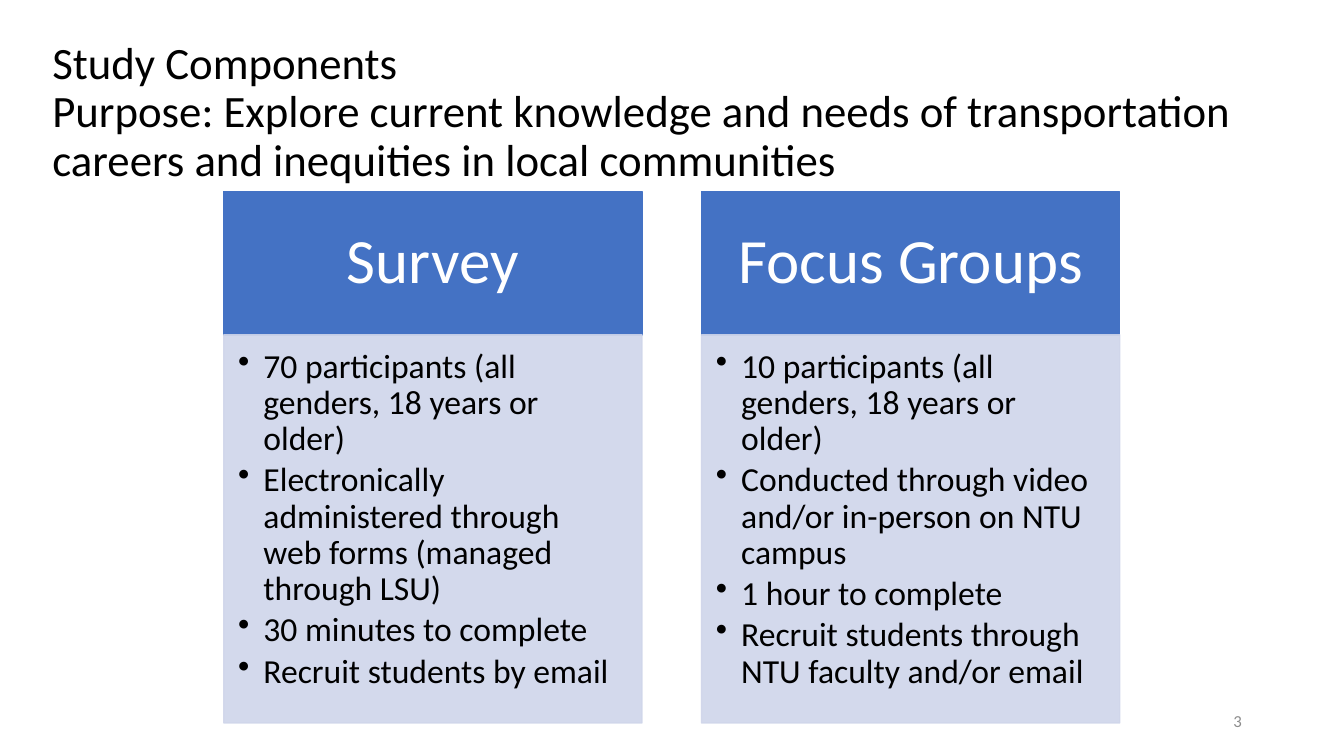
from pptx import Presentation
from pptx.dml.color import RGBColor
from pptx.enum.shapes import MSO_SHAPE
from pptx.enum.text import MSO_ANCHOR, PP_ALIGN
from pptx.oxml.ns import qn
from pptx.util import Cm, Pt
from lxml import etree

RECTANGLE = MSO_SHAPE.RECTANGLE
TOP, MIDDLE = MSO_ANCHOR.TOP, MSO_ANCHOR.MIDDLE
LEFT, CENTER, RIGHT = PP_ALIGN.LEFT, PP_ALIGN.CENTER, PP_ALIGN.RIGHT

TITLE = [
    "Study Components",
    "Purpose: Explore current knowledge and needs of transportation careers and inequities in local communities",
]
COMPONENTS = [
    ("Survey", [
        "70 participants (all genders, 18 years or older)",
        "Electronically administered through web forms (managed through LSU)",
        "30 minutes to complete",
        "Recruit students by email",
    ]),
    ("Focus Groups", [
        "10 participants (all genders, 18 years or older)",
        "Conducted through video and/or in-person on NTU campus",
        "1 hour to complete",
        "Recruit students through NTU faculty and/or email",
    ]),
]
PAGE_NUMBER = "3"

FONT = "Calibri"
BLACK, WHITE, GRAY = "000000", "FFFFFF", "8C8C8C"
BLUE, PALE_BLUE = "4472C4", "CFD5EA"
TEXT_INSETS = (0.25, 0.13, 0.25, 0.13)
HEADER_INSETS = (0.89, 0.51, 0.89, 0.51)
BODY_INSETS = (0.36, 0.36, 0.48, 0.53)
COLUMN_LEFT, COLUMN_TOP, COLUMN_WIDTH, COLUMN_GAP = 5.64, 4.83, 10.54, 1.5
HEADER_HEIGHT, BODY_HEIGHT = 3.61, 9.78
BULLET_INDENT = 0.64


def color(value):
    return RGBColor.from_string(value)


def write(shape, lines, size, text_color, insets=TEXT_INSETS, anchor=MIDDLE,
          align=LEFT, line_spacing=0.9, space_after=0):
    frame = shape.text_frame
    frame.text = "\n".join(lines)
    frame.word_wrap = True
    frame.vertical_anchor = anchor
    (frame.margin_left, frame.margin_top,
     frame.margin_right, frame.margin_bottom) = map(Cm, insets)
    for paragraph in frame.paragraphs:
        paragraph.alignment = align
        paragraph.line_spacing = line_spacing
        paragraph.space_after = Pt(space_after)
        for run in paragraph.runs:
            run.font.name = FONT
            run.font.size = Pt(size)
            run.font.color.rgb = color(text_color)


def add_text(slide, box, lines, size, text_color, **options):
    shape = slide.shapes.add_textbox(*map(Cm, box))
    write(shape, lines, size, text_color, **options)


def add_panel(slide, box, fill):
    shape = slide.shapes.add_shape(RECTANGLE, *map(Cm, box))
    shape.shadow.inherit = False
    shape.fill.solid()
    shape.fill.fore_color.rgb = color(fill)
    shape.line.color.rgb = color(fill)
    shape.line.width = Pt(1)
    return shape


def set_opacity(shape, percent):
    for element in shape.element.spPr.iter(qn("a:srgbClr")):
        etree.SubElement(element, qn("a:alpha"), val=str(percent * 1000))


def add_bullets(shape):
    for paragraph in shape.text_frame.paragraphs:
        properties = paragraph._p.get_or_add_pPr()
        properties.set("marL", str(Cm(BULLET_INDENT)))
        properties.set("indent", str(-Cm(BULLET_INDENT)))
        etree.SubElement(properties, qn("a:buChar"), char="•")


def add_component(slide, left, heading, points):
    header = add_panel(slide, (left, COLUMN_TOP, COLUMN_WIDTH, HEADER_HEIGHT), BLUE)
    write(header, [heading], 45, WHITE, insets=HEADER_INSETS, align=CENTER)
    body_top = COLUMN_TOP + HEADER_HEIGHT
    body = add_panel(slide, (left, body_top, COLUMN_WIDTH, BODY_HEIGHT), PALE_BLUE)
    set_opacity(body, 90)
    write(body, points, 24, BLACK, insets=BODY_INSETS, anchor=TOP, space_after=3.5)
    add_bullets(body)


def main():
    presentation = Presentation()
    presentation.slide_width, presentation.slide_height = Cm(33.87), Cm(19.05)
    slide = presentation.slides.add_slide(presentation.slide_layouts[6])
    add_text(slide, (1.07, 1.02, 32.31, 3.68), TITLE, 32, BLACK)
    for index, (heading, points) in enumerate(COMPONENTS):
        left = COLUMN_LEFT + index * (COLUMN_WIDTH + COLUMN_GAP)
        add_component(slide, left, heading, points)
    add_text(slide, (23.93, 17.65, 7.62, 1.02), [PAGE_NUMBER], 12, GRAY,
             align=RIGHT, line_spacing=1.0)
    presentation.save("out.pptx")


if __name__ == "__main__":
    main()
